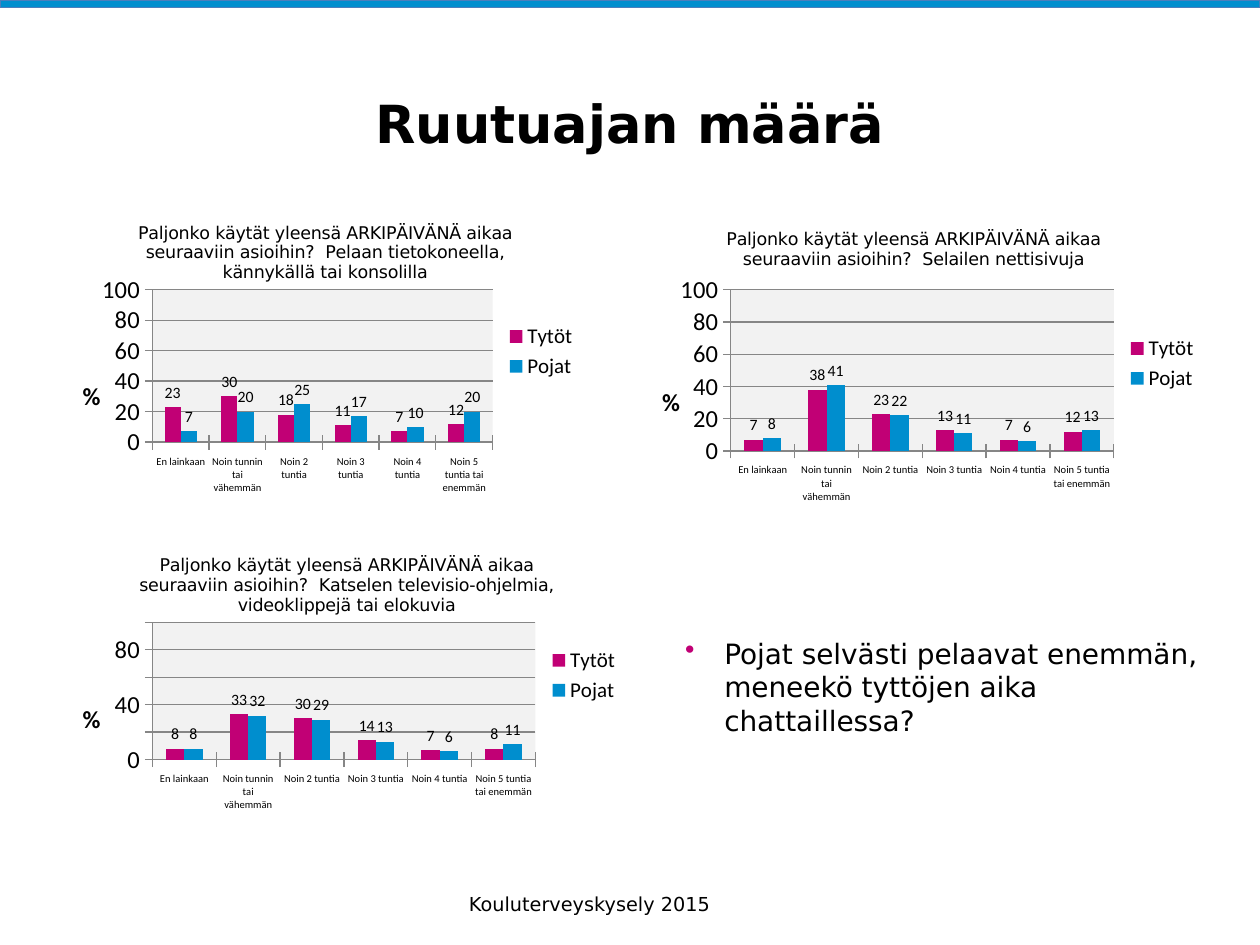
from lxml import etree
from pptx import Presentation
from pptx.chart.data import CategoryChartData
from pptx.dml.color import RGBColor
from pptx.enum.chart import XL_CHART_TYPE as ChartType
from pptx.enum.chart import XL_LABEL_POSITION as LabelPosition
from pptx.enum.chart import XL_LEGEND_POSITION as LegendPosition
from pptx.enum.chart import XL_TICK_MARK as TickMark
from pptx.enum.shapes import MSO_SHAPE as Shape
from pptx.enum.text import MSO_ANCHOR as Anchor
from pptx.enum.text import PP_ALIGN as Align
from pptx.oxml import parse_xml
from pptx.oxml.ns import nsdecls, qn
from pptx.util import Inches, Pt

COLORS = {"girls": "C10075", "boys": "008ECE", "band_line": "4B7EBC",
          "text": "000000", "plot": "F2F2F2", "grid": "868686"}
HEADING_FONT = "DejaVu Sans"
CHART_FONT = "Calibri"
CATEGORIES = ["En lainkaan", "Noin tunnin tai vähemmän", "Noin 2 tuntia",
              "Noin 3 tuntia", "Noin 4 tuntia", "Noin 5 tuntia tai enemmän"]
QUESTION = "Paljonko käytät yleensä ARKIPÄIVÄNÄ aikaa seuraaviin asioihin?  "

# Boxes are left, top, width, height on the slide; heading is left, top
CHARTS = [
    {"activity": "Pelaan tietokoneella, kännykällä tai konsolilla",
     "box": (0.42, 1.6, 4.26, 2.38), "plot": (1.21, 2.3, 2.7, 1.21),
     "heading": (1.07, 1.73),
     "girls": [23, 30, 18, 11, 7, 12], "boys": [7, 20, 25, 17, 10, 20]},
    {"activity": "Selailen nettisivuja",
     "box": (5.02, 1.74, 4.59, 2.29), "plot": (5.8, 2.3, 3.04, 1.28),
     "heading": (5.74, 1.78),
     "girls": [7, 38, 23, 13, 7, 12], "boys": [8, 41, 22, 11, 6, 13]},
    {"activity": "Katselen televisio-ohjelmia, videoklippejä tai elokuvia",
     "box": (0.42, 4.23, 4.6, 2.26), "plot": (1.21, 4.94, 3.04, 1.09),
     "heading": (1.08, 4.37),
     "girls": [8, 33, 30, 14, 7, 8], "boys": [8, 32, 29, 13, 6, 11]},
]


def color(name):
    return RGBColor.from_string(COLORS[name])


def style_font(font, size, name=CHART_FONT, bold=False):
    font.size, font.name, font.bold = Pt(size), name, bold
    font.color.rgb = color("text")


def add_text(page, text, box, size, bold=False, align=Align.LEFT,
             anchor=Anchor.TOP, bullet=None):
    frame = page.shapes.add_textbox(*map(Inches, box)).text_frame
    frame.word_wrap = True
    frame.vertical_anchor = anchor
    para = frame.paragraphs[0]
    para.alignment = align
    if bullet:
        props = para._p.get_or_add_pPr()
        props.set("marL", str(Inches(0.31)))
        props.set("indent", str(-Inches(0.31)))
        tint = etree.SubElement(props, qn("a:buClr"))
        etree.SubElement(tint, qn("a:srgbClr")).set("val", COLORS[bullet])
        etree.SubElement(props, qn("a:buChar")).set("char", "•")
    span = para.add_run()
    span.text = text
    style_font(span.font, size, HEADING_FONT, bold)


def set_layout(element, outer, left, top, size=None):
    """Pin a chart part at slide inches, given the chart's outer box."""
    values = {"x": (left - outer[0]) / outer[2], "y": (top - outer[1]) / outer[3]}
    target = ""
    if size:
        target = '<c:layoutTarget val="inner"/>'
        values.update(w=size[0] / outer[2], h=size[1] / outer[3])
    modes = "".join(f'<c:{key}Mode val="edge"/>' for key in "xy")
    places = "".join(f'<c:{key} val="{value:.4f}"/>' for key, value in values.items())
    layout = parse_xml(f'<c:layout {nsdecls("c")}><c:manualLayout>{target}{modes}'
                       f'{places}</c:manualLayout></c:layout>')
    for old in element.findall(qn("c:layout")):
        element.remove(old)
    text = element.find(qn("c:tx"))
    element.insert(0 if text is None else element.index(text) + 1, layout)


def style_axes(chart, box, plot):
    category, value = chart.category_axis, chart.value_axis
    for axis, size in ((category, 6), (value, 14)):
        axis.major_tick_mark = TickMark.CROSS
        axis.minor_tick_mark = TickMark.NONE
        style_font(axis.tick_labels.font, size)
        axis.format.line.color.rgb = color("grid")
    value.minimum_scale, value.maximum_scale, value.major_unit = 0, 100, 20
    value.major_gridlines.format.line.color.rgb = color("grid")

    # Upright unit sign beside the lower third of the plot
    title = value.axis_title
    title.text_frame.text = "%"
    style_font(title.text_frame.paragraphs[0].runs[0].font, 14, bold=True)
    body = title.text_frame._txBody.find(qn("a:bodyPr"))
    body.set("rot", "0")
    body.set("vert", "horz")
    set_layout(title._element, box, box[0] + 0.2, plot[1] + plot[3] * 2 / 3 - 0.13)


def add_usage_chart(page, activity, box, plot, heading, girls, boys):
    data = CategoryChartData()
    data.categories = CATEGORIES
    data.add_series("Tytöt", girls)
    data.add_series("Pojat", boys)
    chart = page.shapes.add_chart(ChartType.COLUMN_CLUSTERED,
                                  *map(Inches, box), data).chart
    style_font(chart.font, 18)

    # Heading
    chart.has_title = True
    frame = chart.chart_title.text_frame
    frame.text = QUESTION + activity
    style_font(frame.paragraphs[0].runs[0].font, 10, HEADING_FONT)
    set_layout(chart.chart_title._element, box, *heading)

    # Legend
    chart.has_legend = True
    chart.legend.position = LegendPosition.RIGHT
    chart.legend.include_in_layout = False
    style_font(chart.legend.font, 12)

    # Plot and columns
    area = chart._chartSpace.chart.plotArea
    set_layout(area, box, *plot[:2], size=plot[2:])
    area.append(parse_xml(
        f'<c:spPr {nsdecls("c", "a")}><a:solidFill><a:srgbClr val="{COLORS["plot"]}"/>'
        '</a:solidFill></c:spPr>'))
    columns = chart.plots[0]
    columns.gap_width, columns.overlap = 150, 0
    columns.vary_by_categories = False
    for series, name in zip(columns.series, ("girls", "boys")):
        series.format.fill.solid()
        series.format.fill.fore_color.rgb = color(name)
        labels = series.data_labels
        labels.show_value = True
        labels.position = LabelPosition.OUTSIDE_END
        style_font(labels.font, 9)
    style_axes(chart, box, plot)


def add_top_band(page, box):
    band = page.shapes.add_shape(Shape.RECTANGLE, *map(Inches, box))
    band.shadow.inherit = False
    band.fill.solid()
    band.fill.fore_color.rgb = color("boys")
    band.line.color.rgb = color("band_line")
    band.line.width = Pt(0.75)


def main():
    deck = Presentation()
    deck.slide_width, deck.slide_height = Inches(10), Inches(7.5)
    page = deck.slides.add_slide(deck.slide_layouts[6])

    add_top_band(page, (0, 0, 10, 0.06))
    add_text(page, "Ruutuajan määrä", (0.5, 0.43, 9, 1.09), 30, bold=True,
             align=Align.CENTER, anchor=Anchor.MIDDLE)
    for details in CHARTS:
        add_usage_chart(page, **details)
    add_text(page, "Pojat selvästi pelaavat enemmän, meneekö tyttöjen aika chattaillessa?",
             (5.34, 5, 4.44, 0.91), 16, bullet="girls")
    add_text(page, "Kouluterveyskysely 2015", (3.21, 7.03, 2.94, 0.29), 11,
             align=Align.CENTER)
    deck.save("out.pptx")


if __name__ == "__main__":
    main()
